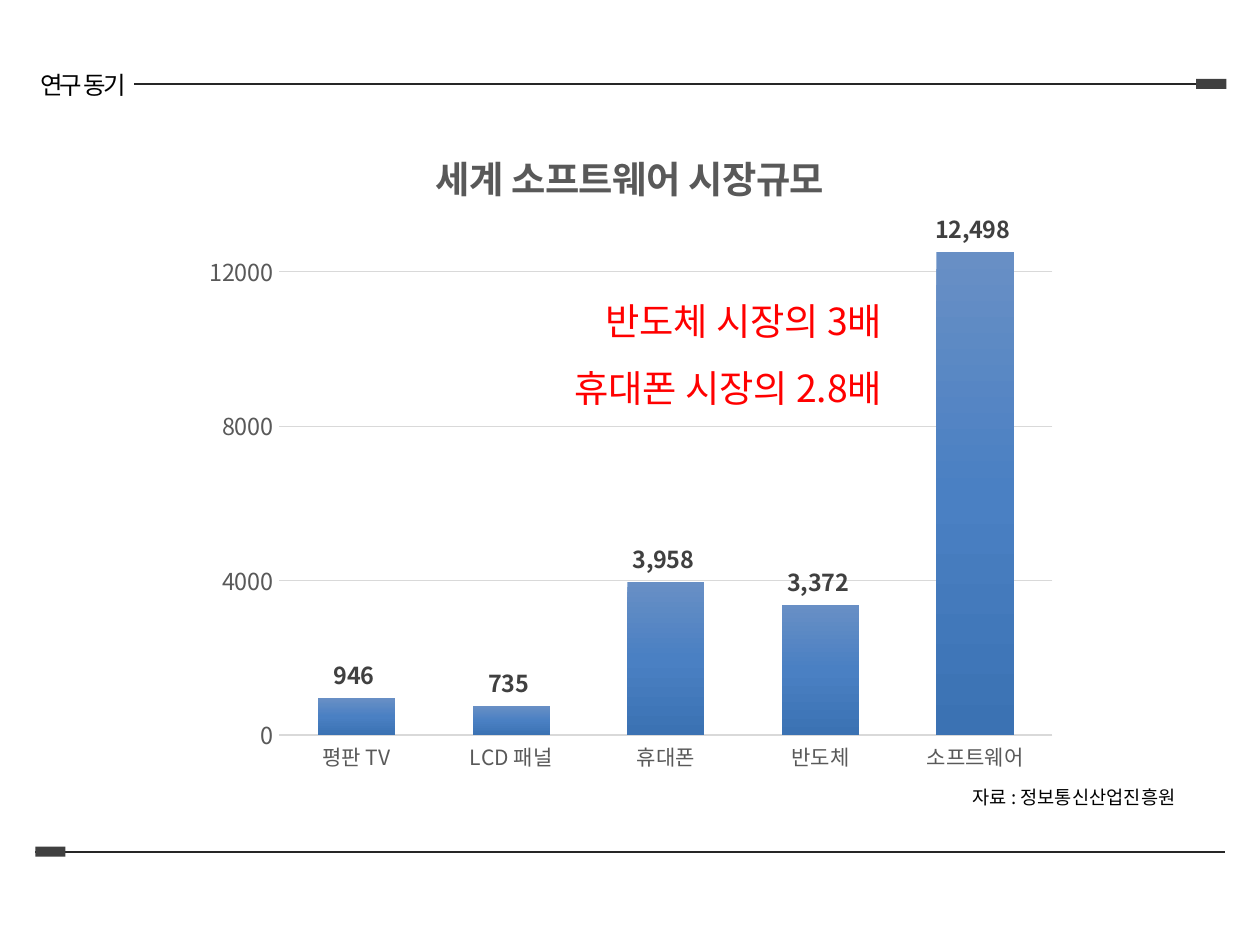
import copy
from dataclasses import dataclass

import lxml.etree
import pptx
import pptx.chart.data
import pptx.dml.color
import pptx.enum.chart
import pptx.enum.shapes
import pptx.enum.text
import pptx.oxml
import pptx.oxml.ns
import pptx.util

Inches = pptx.util.Inches
Pt = pptx.util.Pt
qn = pptx.oxml.ns.qn
ALIGN = pptx.enum.text.PP_ALIGN

COLORS = {
    "text": "000000", "accent": "FF0000", "rule": "262626", "marker": "404040",
    "label": "404040", "axis": "595959", "grid": "D9D9D9",
}
BAR_GRADIENT = [(0, "688FC5"), (0.5, "4A80C3"), (1, "3B72B3")]
KOREAN_FONT = "Noto Sans CJK KR"
SLIDE_WIDTH = 7.5
MARKET_SIZES = {
    "평판 TV": 946, "LCD 패널": 735, "휴대폰": 3958, "반도체": 3372, "소프트웨어": 12498,
}


@dataclass
class Rule:
    left: float
    y: float
    marker_left: float
    marker_at_end: bool


@dataclass
class Caption:
    lines: list[str]
    left: float
    top: float
    width: float
    height: float
    size: float
    font: str = KOREAN_FONT
    color: str = "text"
    align: ALIGN = ALIGN.LEFT
    line_spacing: float = 1.0
    letter_spacing: float = 0
    wrap: bool = False


RULES = [
    Rule(0.8, 0.5, 7.12, True),
    Rule(0.21, 5.07, 0.21, False),
]
CAPTIONS = [
    Caption(["연구 동기"], -0.42, 0.37, 1.83, 0.28, 10.5, font="Arial",
            align=ALIGN.CENTER, letter_spacing=-1.1, wrap=True),
    Caption(["자료 : 정보통신산업진흥원"], 5.69, 4.63, 1.54, 0.24, 8),
    Caption(["반도체 시장의 3배", "휴대폰 시장의 2.8배"], 3.12, 1.59, 2.23, 0.91, 16,
            color="accent", align=ALIGN.RIGHT, line_spacing=1.5),
]


def rgb(name: str) -> pptx.dml.color.RGBColor:
    return pptx.dml.color.RGBColor.from_string(COLORS.get(name, name))


def style_font(font, size: float, color: str, name: str = KOREAN_FONT, bold: bool = False) -> None:
    """Set the font, for Latin and for East Asian letters alike."""
    values = {"size": Pt(size), "name": name, "bold": bold}
    for attribute, value in values.items():
        setattr(font, attribute, value)
    font.color.rgb = rgb(color)
    east_asian = lxml.etree.Element(qn("a:ea"), typeface=name)
    font._rPr.find(qn("a:latin")).addnext(east_asian)


def style_line(line, color: str, width: float) -> None:
    line.color.rgb = rgb(color)
    line.width = Pt(width)


def set_layout(element, **fractions: float) -> None:
    """Place a chart title or plot area by fractions of the chart's size."""
    for old in element.findall(qn("c:layout")):
        element.remove(old)
    target = "<c:layoutTarget val='inner'/>" if "w" in fractions else ""
    modes = "<c:xMode val='edge'/><c:yMode val='edge'/>"
    values = "".join(f"<c:{key} val='{value}'/>" for key, value in fractions.items())
    layout = pptx.oxml.parse_xml(
        f"<c:layout {pptx.oxml.ns.nsdecls('c')}><c:manualLayout>"
        f"{target}{modes}{values}</c:manualLayout></c:layout>")
    text = element.find(qn("c:tx"))
    if text is None:
        element.insert(0, layout)
    else:
        text.addnext(layout)


def fill_bars(series) -> None:
    fill = series.format.fill
    fill.gradient()
    fill.gradient_angle = 270
    stop_list = next(series._element.iter(qn("a:gsLst")))
    stop_list.insert(1, copy.deepcopy(stop_list[0]))
    for stop, (position, color) in zip(fill.gradient_stops, BAR_GRADIENT):
        stop.position = position
        stop.color.rgb = rgb(color)


def add_market_chart(slide) -> None:
    data = pptx.chart.data.CategoryChartData()
    data.categories = list(MARKET_SIZES)
    data.add_series("Series 1", list(MARKET_SIZES.values()))
    chart = slide.shapes.add_chart(
        pptx.enum.chart.XL_CHART_TYPE.COLUMN_CLUSTERED,
        Inches(1.14), Inches(0.72), Inches(5.23), Inches(3.93), data).chart
    style_font(chart.font, 10, "text")
    chart.has_legend = False

    chart.has_title = True
    heading = chart.chart_title.text_frame
    heading.text = "세계 소프트웨어 시장규모"
    style_font(heading.paragraphs[0].runs[0].font, 16, "axis", bold=True)
    set_layout(chart.chart_title._element, x=0.27, y=0.03)
    set_layout(chart._chartSpace.chart.plotArea, x=0.1, y=0.17, w=0.88, h=0.76)

    for axis, size in ((chart.category_axis, 9), (chart.value_axis, 10)):
        axis.major_tick_mark = pptx.enum.chart.XL_TICK_MARK.NONE
        style_font(axis.tick_labels.font, size, "axis")
    style_line(chart.category_axis.format.line, "grid", 1)
    scale = {"minimum_scale": 0, "maximum_scale": 13000, "major_unit": 4000,
             "has_major_gridlines": True}
    for attribute, value in scale.items():
        setattr(chart.value_axis, attribute, value)
    chart.value_axis.format.line.fill.background()
    style_line(chart.value_axis.major_gridlines.format.line, "grid", 0.25)

    bars = chart.plots[0]
    bars.gap_width = 100
    bars.overlap = -24
    bars.vary_by_categories = False
    fill_bars(bars.series[0])
    labels = bars.series[0].data_labels
    label_format = {
        "show_value": True, "number_format": r"#,##0_);[Red]\(#,##0\)",
        "number_format_is_linked": False,
        "position": pptx.enum.chart.XL_LABEL_POSITION.OUTSIDE_END,
    }
    for attribute, value in label_format.items():
        setattr(labels, attribute, value)
    style_font(labels.font, 10, "label", bold=True)


def add_rule(slide, rule: Rule) -> None:
    """Draw a horizontal line with a small block on one end."""
    y = Inches(rule.y)
    line = slide.shapes.add_connector(
        pptx.enum.shapes.MSO_CONNECTOR.STRAIGHT, Inches(rule.left), y, Inches(7.29), y)
    style_line(line.line, "rule", 0.75)
    line._element.spPr.append(
        pptx.oxml.parse_xml(f"<a:effectLst {pptx.oxml.ns.nsdecls('a')}/>"))
    marker = slide.shapes.add_shape(
        pptx.enum.shapes.MSO_SHAPE.RECTANGLE,
        Inches(rule.marker_left), Inches(rule.y - 0.03), Inches(0.18), Inches(0.06))
    marker.shadow.inherit = False
    marker.fill.solid()
    marker.fill.fore_color.rgb = rgb("marker")
    marker.line.fill.background()
    if rule.marker_at_end:
        line.end_connect(marker, 3)
    else:
        line.begin_connect(marker, 1)


def add_caption(slide, caption: Caption) -> None:
    frame = slide.shapes.add_textbox(
        Inches(caption.left), Inches(caption.top),
        Inches(caption.width), Inches(caption.height)).text_frame
    frame.word_wrap = caption.wrap
    frame.auto_size = pptx.enum.text.MSO_AUTO_SIZE.SHAPE_TO_FIT_TEXT
    frame.text = "\n".join(caption.lines)
    for paragraph in frame.paragraphs:
        paragraph.alignment = caption.align
        paragraph.line_spacing = caption.line_spacing
        run = paragraph.runs[0]
        style_font(run.font, caption.size, caption.color, caption.font)
        if caption.letter_spacing:
            run._r.get_or_add_rPr().set("spc", str(round(caption.letter_spacing * 100)))


def main() -> None:
    deck = pptx.Presentation()
    deck.slide_width = Inches(SLIDE_WIDTH)
    deck.slide_height = Inches(SLIDE_WIDTH * 3 / 4)
    slide = deck.slides.add_slide(deck.slide_layouts[6])
    add_market_chart(slide)
    for rule in RULES:
        add_rule(slide, rule)
    for caption in CAPTIONS:
        add_caption(slide, caption)
    deck.save("out.pptx")


if __name__ == "__main__":
    main()
